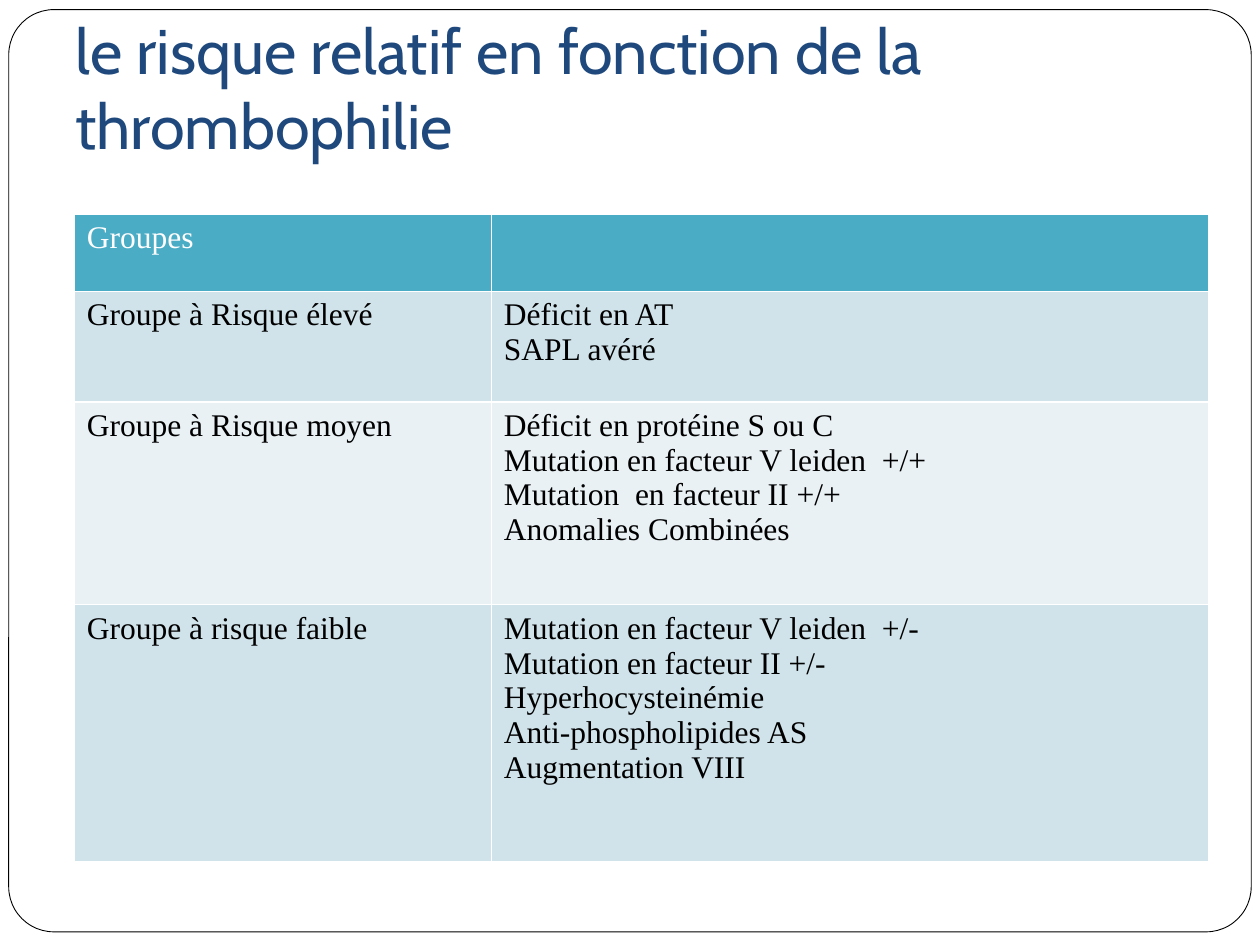
"""Build a slide with a table of thrombophilia risk groups."""
from pptx import Presentation
from pptx.dml.color import RGBColor
from pptx.enum.shapes import MSO_SHAPE
from pptx.enum.text import MSO_ANCHOR, MSO_AUTO_SIZE, PP_ALIGN
from pptx.util import Pt

COLORS = {
    "title": "1F497D",
    "header": "4BACC6",
    "dark_band": "D0E3EA",
    "light_band": "E9F1F5",
    "white": "FFFFFF",
    "black": "000000",
}
ROWS = [
    (44, "header", "Groupes", ""),
    (63, "dark_band", "Groupe à Risque élevé", "Déficit en AT\nSAPL avéré"),
    (116, "light_band", "Groupe à Risque moyen",
     "Déficit en protéine S ou C\nMutation en facteur V leiden  +/+\n"
     "Mutation  en facteur II +/+\nAnomalies Combinées"),
    (147, "dark_band", "Groupe à risque faible",
     "Mutation en facteur V leiden  +/-\nMutation en facteur II +/-\n"
     "Hyperhocysteinémie\nAnti-phospholipides AS\nAugmentation VIII"),
]
COLUMN_WIDTHS = [238.3, 409.7]


def rgb(name):
    return RGBColor.from_string(COLORS[name])


prs = Presentation()
prs.slide_width, prs.slide_height = Pt(720), Pt(540)
s = prs.slides.add_slide(prs.slide_layouts[5])

frame = s.shapes.add_shape(MSO_SHAPE.ROUNDED_RECTANGLE, Pt(5), Pt(5.5), Pt(710), Pt(527))
frame.adjustments[0] = 0.049
frame.shadow.inherit = False
frame.fill.solid()
frame.fill.fore_color.rgb = rgb("white")
frame.line.color.rgb = rgb("black")
frame.line.width = Pt(0.5)
s.shapes._spTree.insert(2, frame._element)

title = s.shapes.title
title.left, title.top, title.width, title.height = Pt(36), Pt(10), Pt(648), Pt(90)
tf = title.text_frame
tf.text = "le risque relatif en fonction de la thrombophilie"
tf.word_wrap = True
tf.auto_size = MSO_AUTO_SIZE.NONE
tf.vertical_anchor = MSO_ANCHOR.BOTTOM
tf.margin_left = tf.margin_right = tf.margin_bottom = Pt(7.2)
tf.margin_top = Pt(3.6)
p = tf.paragraphs[0]
p.alignment = PP_ALIGN.LEFT
p.font.name, p.font.size = "Cabin", Pt(36)
p.font.color.rgb = rgb("title")

table = s.shapes.add_table(len(ROWS), len(COLUMN_WIDTHS), Pt(42.5), Pt(122.6),
                           Pt(sum(COLUMN_WIDTHS)), Pt(sum(row[0] for row in ROWS))).table
for column, width in zip(table.columns, COLUMN_WIDTHS):
    column.width = Pt(width)
for row, (height, fill, *texts) in zip(table.rows, ROWS):
    row.height = Pt(height)
    for cell, text in zip(row.cells, texts):
        cell.fill.solid()
        cell.fill.fore_color.rgb = rgb(fill)
        cell.text = text
        for p in cell.text_frame.paragraphs:
            p.font.name, p.font.size, p.font.bold = "Times New Roman", Pt(18), False
            p.font.color.rgb = rgb("white" if fill == "header" else "black")

prs.save("out.pptx")
